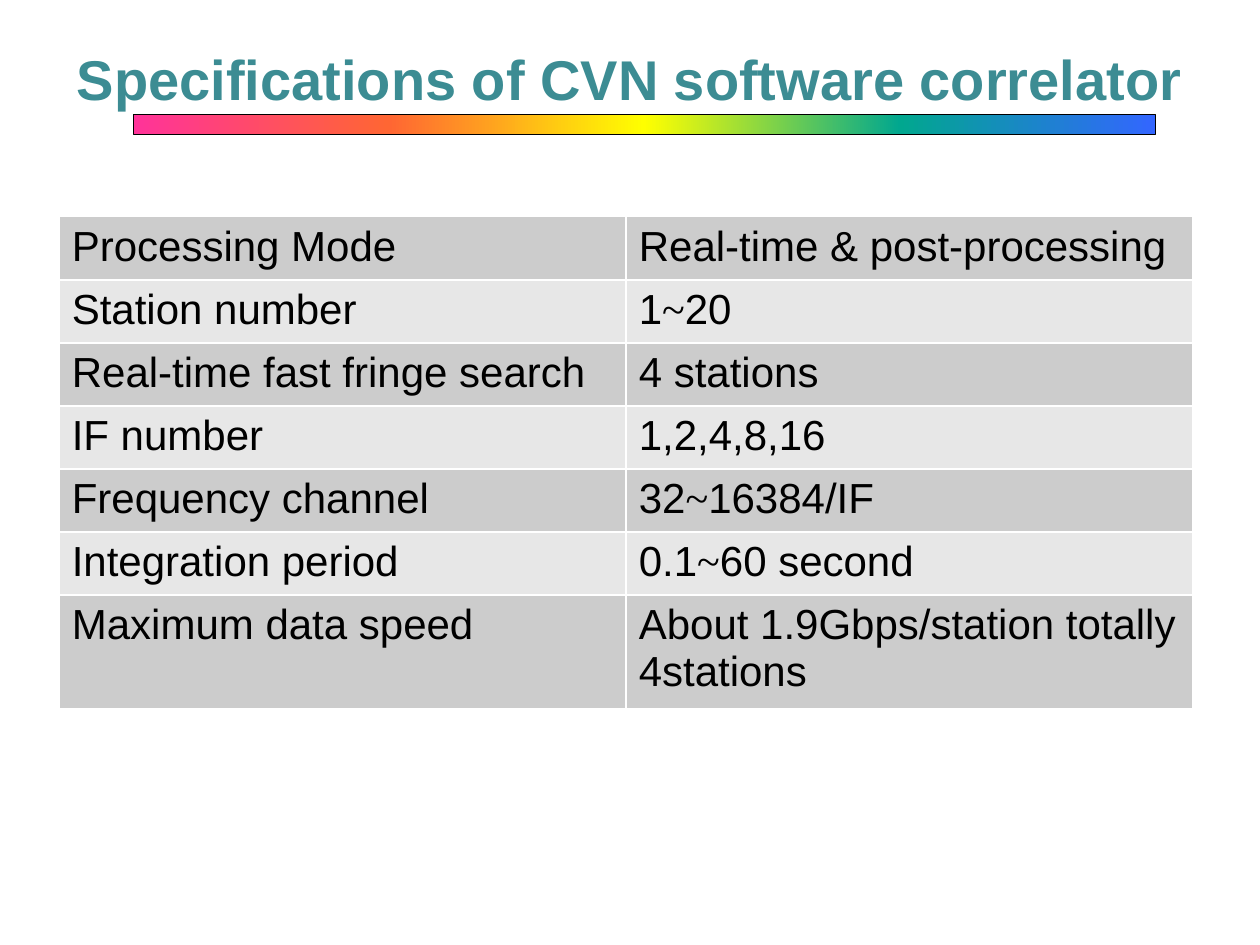
from dataclasses import dataclass

from lxml import etree
from pptx import Presentation
from pptx.dml.color import RGBColor
from pptx.enum.shapes import MSO_SHAPE
from pptx.enum.text import MSO_ANCHOR, PP_ALIGN
from pptx.oxml.ns import qn
from pptx.util import Inches, Pt

RECT = MSO_SHAPE.RECTANGLE
TOP = MSO_ANCHOR.TOP
CENTER = PP_ALIGN.CENTER


@dataclass(frozen=True)
class Theme:
    title: str = "3C8C93"
    text: str = "000000"
    border: str = "FFFFFF"
    bands: tuple = ("CCCCCC", "E7E7E7")
    rainbow: tuple = ("FF3399", "FF6633", "FFFF00", "01A78F", "3366FF")
    font: str = "Arial"
    tilde_font: str = "Times New Roman"
    title_size: int = 32
    cell_size: int = 24


theme = Theme()


def add_run(p, text, size, color, font=theme.font, bold=False):
    r = p.add_run()
    r.text = text
    r.font.name = font
    r.font.size = Pt(size)
    r.font.bold = bold
    r.font.color.rgb = RGBColor.from_string(color)


def add_color(parent, color):
    etree.SubElement(parent, qn("a:srgbClr"), val=color)


prs = Presentation()
prs.slide_width, prs.slide_height = Inches(10), Inches(7.5)
s = prs.slides.add_slide(prs.slide_layouts[6])

# Rainbow bar under the title
bar = s.shapes.add_shape(RECT, Inches(1.06), Inches(0.91), Inches(8.11), Inches(0.16))
bar.shadow.inherit = False
bar.line.color.rgb = RGBColor.from_string(theme.text)
bar.line.width = Pt(0.75)
bar.fill.gradient()
bar.fill.gradient_angle = 0
stops = bar._element.spPr.find(qn("a:gradFill")).find(qn("a:gsLst"))
for stop in list(stops):
    stops.remove(stop)
for i, color in enumerate(theme.rainbow):
    add_color(etree.SubElement(stops, qn("a:gs"), pos=str(i * 25000)), color)

# Title
title = s.shapes.add_textbox(Inches(0.5), Inches(0.3), Inches(9), Inches(1.25))
tf = title.text_frame
tf.word_wrap = True
tf.vertical_anchor = TOP
p = tf.paragraphs[0]
p.alignment = CENTER
add_run(p, "Specifications of CVN software correlator",
        theme.title_size, theme.title, bold=True)

# Specification table
specs = [
    ("Processing Mode", "Real-time & post-processing"),
    ("Station number", "1~20"),
    ("Real-time fast fringe search", "4 stations"),
    ("IF number", "1,2,4,8,16"),
    ("Frequency channel", "32~16384/IF"),
    ("Integration period", "0.1~60 second"),
    ("Maximum data speed", "About 1.9Gbps/station totally 4stations"),
]
table = s.shapes.add_table(len(specs), 2, Inches(0.47), Inches(1.72),
                           Inches(9), Inches(0.41 * len(specs))).table
table.first_row = False
table.horz_banding = False

for i, row in enumerate(specs):
    for j, text in enumerate(row):
        cell = table.cell(i, j)
        p = cell.text_frame.paragraphs[0]
        # The tilde is set in its own typeface
        for part in text.replace("~", "|~|").split("|"):
            font = theme.tilde_font if part == "~" else theme.font
            add_run(p, part, theme.cell_size, theme.text, font)

        # Borders come before the fill in the cell properties
        tcPr = cell._tc.get_or_add_tcPr()
        for side in ("lnL", "lnR", "lnT", "lnB"):
            ln = etree.SubElement(tcPr, qn(f"a:{side}"), w=str(Pt(1)))
            add_color(etree.SubElement(ln, qn("a:solidFill")), theme.border)
        cell.fill.solid()
        cell.fill.fore_color.rgb = RGBColor.from_string(theme.bands[i % 2])

prs.save("out.pptx")
